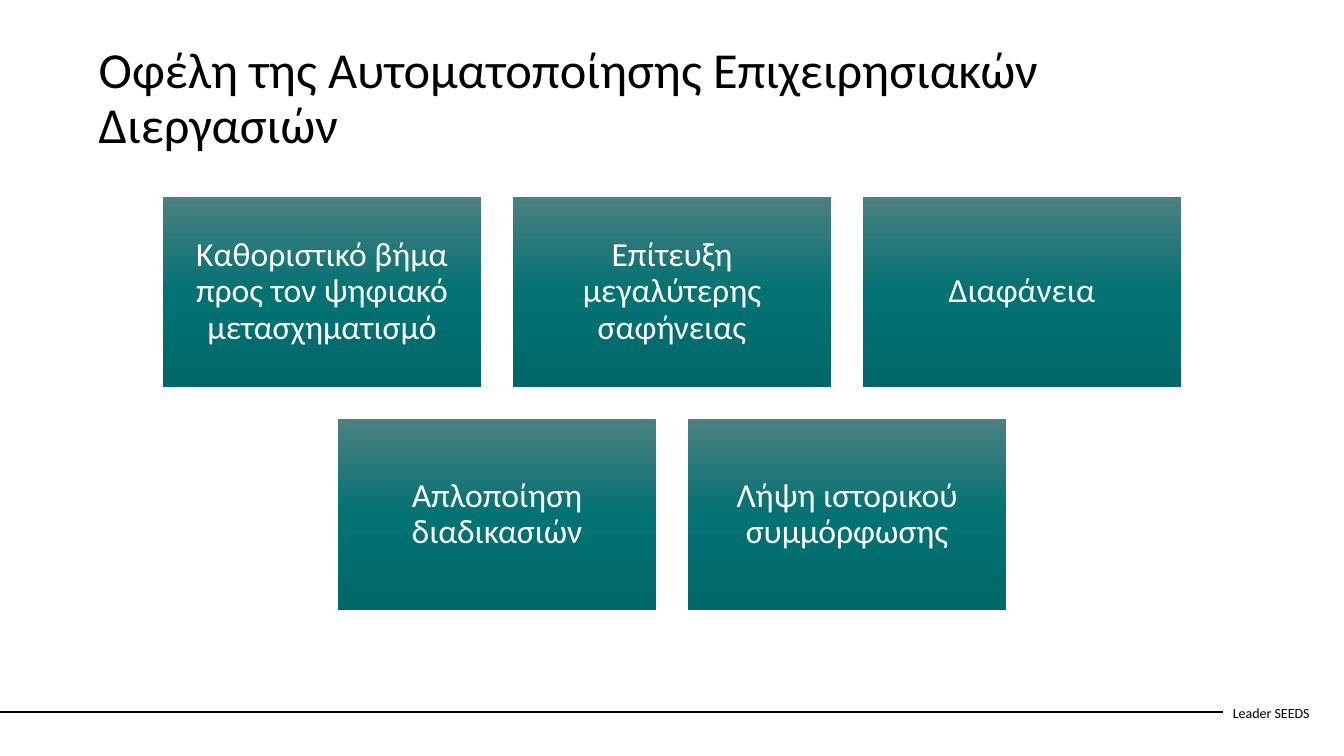
from copy import deepcopy

from lxml import etree
from pptx import Presentation
from pptx.dml.color import RGBColor
from pptx.enum.shapes import MSO_CONNECTOR, MSO_SHAPE
from pptx.enum.text import MSO_ANCHOR as ANCHOR, PP_ALIGN as ALIGN
from pptx.oxml.ns import qn
from pptx.util import Pt

BLACK = RGBColor(0x00, 0x00, 0x00)
WHITE = RGBColor(0xFF, 0xFF, 0xFF)
TEAL_STOPS = [
    (0, RGBColor(0x4B, 0x80, 0x81)),
    (0.5, RGBColor(0x03, 0x72, 0x73)),
    (1, RGBColor(0x00, 0x68, 0x69)),
]

CENTER_X, CARDS_TOP = 480, 140.4
CARD_W, CARD_H, GAP = 227.25, 136.25, 22.75
CARD_ROWS = [
    [
        "Καθοριστικό βήμα προς τον ψηφιακό μετασχηματισμό",
        "Επίτευξη μεγαλύτερης σαφήνειας",
        "Διαφάνεια",
    ],
    ["Απλοποίηση διαδικασιών", "Λήψη ιστορικού συμμόρφωσης"],
]


def write(s, text, size, color, anchor, align=ALIGN.LEFT, spacing=1.0):
    tf = s.text_frame
    tf.word_wrap = True
    tf.vertical_anchor = anchor
    p = tf.paragraphs[0]
    p.text = text
    p.alignment = align
    p.line_spacing = spacing
    p.font.name = "Calibri"
    p.font.size = Pt(size)
    p.font.color.rgb = color
    return tf


def fill_teal(s):
    """Fill a shape with the three-stop gradient, light at the top."""
    s.fill.gradient()
    s.fill.gradient_angle = 270
    stops = s.fill._fill._gradFill.find(qn("a:gsLst"))
    stops.append(deepcopy(stops[0]))
    for stop, (position, color) in zip(s.fill.gradient_stops, TEAL_STOPS):
        stop.position = position
        stop.color.rgb = color


prs = Presentation()
prs.slide_width, prs.slide_height = Pt(960), Pt(540)
slide = prs.slides.add_slide(prs.slide_layouts[6])
shapes = slide.shapes

# Footer
footer = shapes.add_textbox(Pt(873.5), Pt(494.6), Pt(72.7), Pt(28.8))
write(footer, "Leader SEEDS", 10, BLACK, ANCHOR.MIDDLE)
rule = shapes.add_connector(MSO_CONNECTOR.STRAIGHT, Pt(-0.7), Pt(508.7), Pt(873.5), Pt(508.7))
rule.line.color.rgb = BLACK
rule.line.width = Pt(1.5)
etree.SubElement(rule._element.spPr, qn("a:effectLst"))

# Title
title = shapes.add_textbox(Pt(63.4), Pt(28.8), Pt(834.5), Pt(63.4))
write(title, "Οφέλη της Αυτοματοποίησης Επιχειρησιακών Διεργασιών",
      36, BLACK, ANCHOR.TOP, spacing=0.9)

# Benefit cards, each row centred
for row, labels in enumerate(CARD_ROWS):
    row_w = len(labels) * (CARD_W + GAP) - GAP
    top = CARDS_TOP + row * (CARD_H + GAP)
    for col, label in enumerate(labels):
        left = CENTER_X - row_w / 2 + col * (CARD_W + GAP)
        card = shapes.add_shape(MSO_SHAPE.RECTANGLE, Pt(left), Pt(top), Pt(CARD_W), Pt(CARD_H))
        card.shadow.inherit = False
        card.line.fill.background()
        fill_teal(card)
        tf = write(card, label, 24, WHITE, ANCHOR.MIDDLE, ALIGN.CENTER, 0.9)
        tf.margin_left = tf.margin_right = tf.margin_top = tf.margin_bottom = Pt(7.2)

prs.save("out.pptx")
